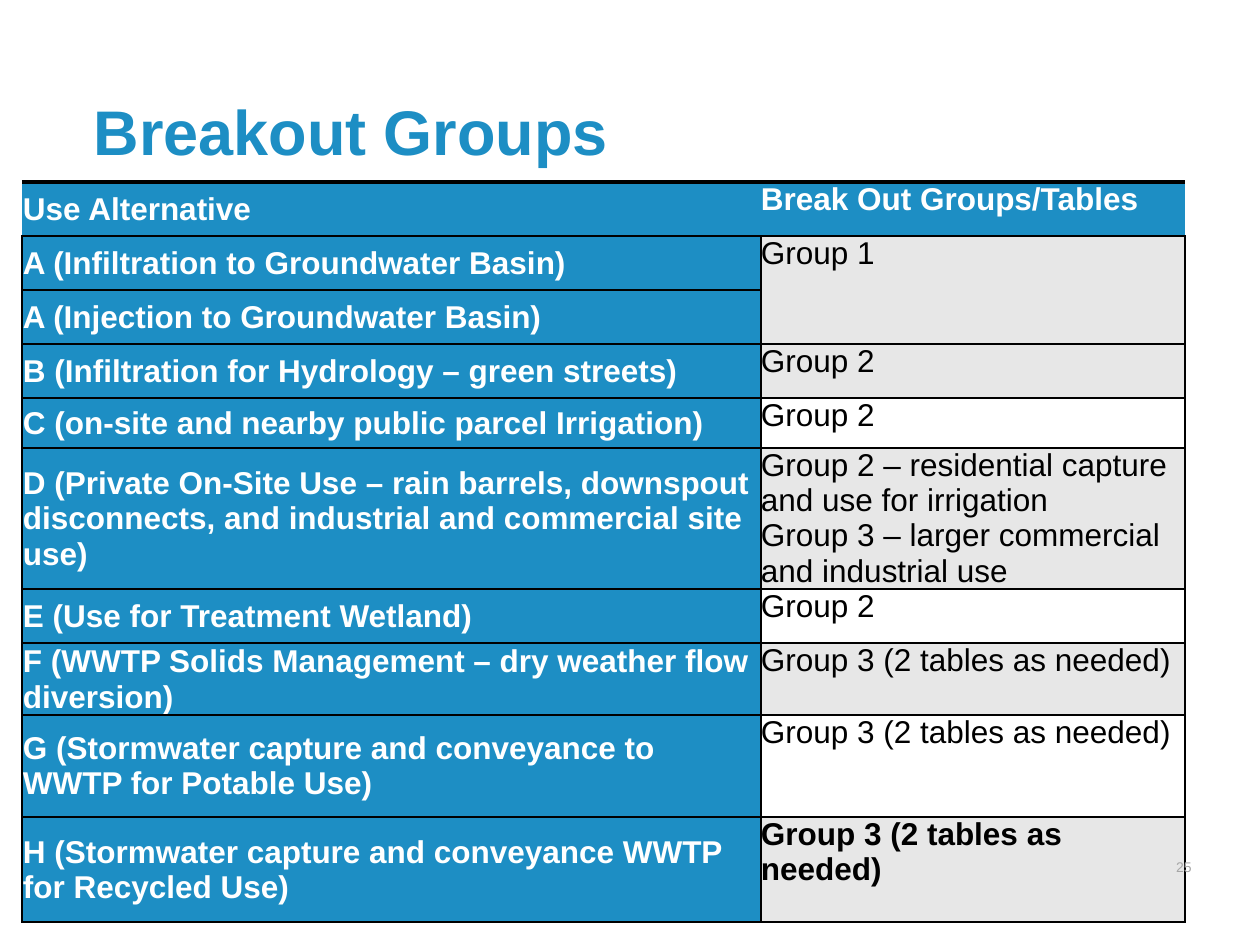
from lxml import etree
from pptx import Presentation
from pptx import util as u
from pptx.dml.color import RGBColor
from pptx.enum import text
from pptx.oxml.ns import qn

PX = 914400 / 126
FONT = "Arial"
BLUE, GREY, WHITE, BLACK, PALE = "1D8EC4", "E7E7E7", "FFFFFF", "000000", "A6A6A6"
MIDDLE, TOP = text.MSO_ANCHOR.MIDDLE, text.MSO_ANCHOR.TOP

COLUMNS = [739, 424]
# Row height, use alternative, group paragraphs, fill of the group cell
ROWS = [
    (54, "Use Alternative", ["Break Out Groups/Tables"], BLUE),
    (54, "A (Infiltration to Groundwater Basin)", ["Group 1"], GREY),
    (54, "A (Injection to Groundwater Basin)", [], GREY),
    (54, "B (Infiltration for Hydrology – green streets)", ["Group 2"], GREY),
    (50, "C (on-site and nearby public parcel Irrigation)", ["Group 2"], WHITE),
    (141, "D (Private On-Site Use – rain barrels, downspout disconnects, "
          "and industrial and commercial site use)",
     ["Group 2 – residential capture and use for irrigation",
      "Group 3 – larger commercial and industrial use"], GREY),
    (54, "E (Use for Treatment Wetland)", ["Group 2"], WHITE),
    (72, "F (WWTP Solids Management – dry weather flow diversion)",
     ["Group 3 (2 tables as needed)"], GREY),
    (102, "G (Stormwater capture and conveyance to WWTP for Potable Use)",
     ["Group 3 (2 tables as needed)"], WHITE),
    (105, "H (Stormwater capture and conveyance WWTP for Recycled Use)",
     ["Group 3 (2 tables as needed)"], GREY),
]


def px(length):
    return u.Emu(round(length * PX))


def color(value):
    return RGBColor.from_string(value)


def add_span(para, words, size, fill, bold=False):
    span = para.add_run()
    span.text = words
    span.font.name = FONT
    span.font.size = u.Pt(size)
    span.font.bold = bold
    span.font.color.rgb = color(fill)


def set_borders(cell, widths):
    """Draw the L, R, T and B edges; a width of 0 hides an edge."""
    props = cell._tc.get_or_add_tcPr()
    for side, width in zip("LRTB", widths):
        line = etree.SubElement(props, qn(f"a:ln{side}"), w=str(u.Pt(width)))
        if width:
            fill = etree.SubElement(line, qn("a:solidFill"))
            etree.SubElement(fill, qn("a:srgbClr"), val=BLACK)
        else:
            etree.SubElement(line, qn("a:noFill"))


def fill_cell(cell, words, fill, ink, bold, anchor, inset, borders):
    set_borders(cell, borders)
    cell.fill.solid()
    cell.fill.fore_color.rgb = color(fill)
    cell.vertical_anchor = anchor
    cell.margin_left = cell.margin_right = cell.margin_top = px(inset)
    cell.margin_bottom = 0
    for index, line in enumerate(words):
        frame = cell.text_frame
        para = frame.add_paragraph() if index else frame.paragraphs[0]
        add_span(para, line, 18, ink, bold)


def add_title(page, left, top, width, height):
    title = page.shapes.title
    title.left, title.top, title.width, title.height = map(px, (left, top, width, height))
    frame = title.text_frame
    frame.word_wrap = True
    frame.vertical_anchor = MIDDLE
    para = frame.paragraphs[0]
    para.alignment = text.PP_ALIGN.LEFT
    para.line_spacing = 0.9
    add_span(para, "Breakout Groups", 36, BLUE, True)


def add_groups_table(page, left, top):
    heights = [row[0] for row in ROWS]
    table = page.shapes.add_table(len(ROWS), len(COLUMNS), px(left), px(top),
                                  px(sum(COLUMNS)), px(sum(heights))).table
    table.first_row = table.horz_banding = False
    for column, width in zip(table.columns, COLUMNS):
        column.width = px(width)
    for index, (height, use, groups, fill) in enumerate(ROWS):
        table.rows[index].height = px(height)
        header, last = index == 0, index == len(ROWS) - 1
        borders = (0, 0, 2, 1) if header else (1, 1, 1, 1)
        fill_cell(table.cell(index, 0), [use], BLUE, WHITE, True, MIDDLE, 1, borders)
        fill_cell(table.cell(index, 1), groups, fill, WHITE if header else BLACK,
                  header or last, TOP, 0, borders)
    # Both A alternatives share one group
    table.cell(1, 1).merge(table.cell(2, 1))


def add_page_number(page, left, top, width, height):
    box = page.shapes.add_textbox(*map(px, (left, top, width, height)))
    frame = box.text_frame
    frame.word_wrap = True
    frame.vertical_anchor = MIDDLE
    para = frame.paragraphs[0]
    para.alignment = text.PP_ALIGN.RIGHT
    add_span(para, "25", 8, PALE)


def main():
    deck = Presentation()
    deck.slide_width, deck.slide_height = px(1260), px(945)
    page = deck.slides.add_slide(deck.slide_layouts[5])
    add_title(page, 81, 92, 1086, 86)
    add_groups_table(page, 22, 182)
    add_page_number(page, 1160, 848, 44, 37)
    deck.save("out.pptx")


if __name__ == "__main__":
    main()
